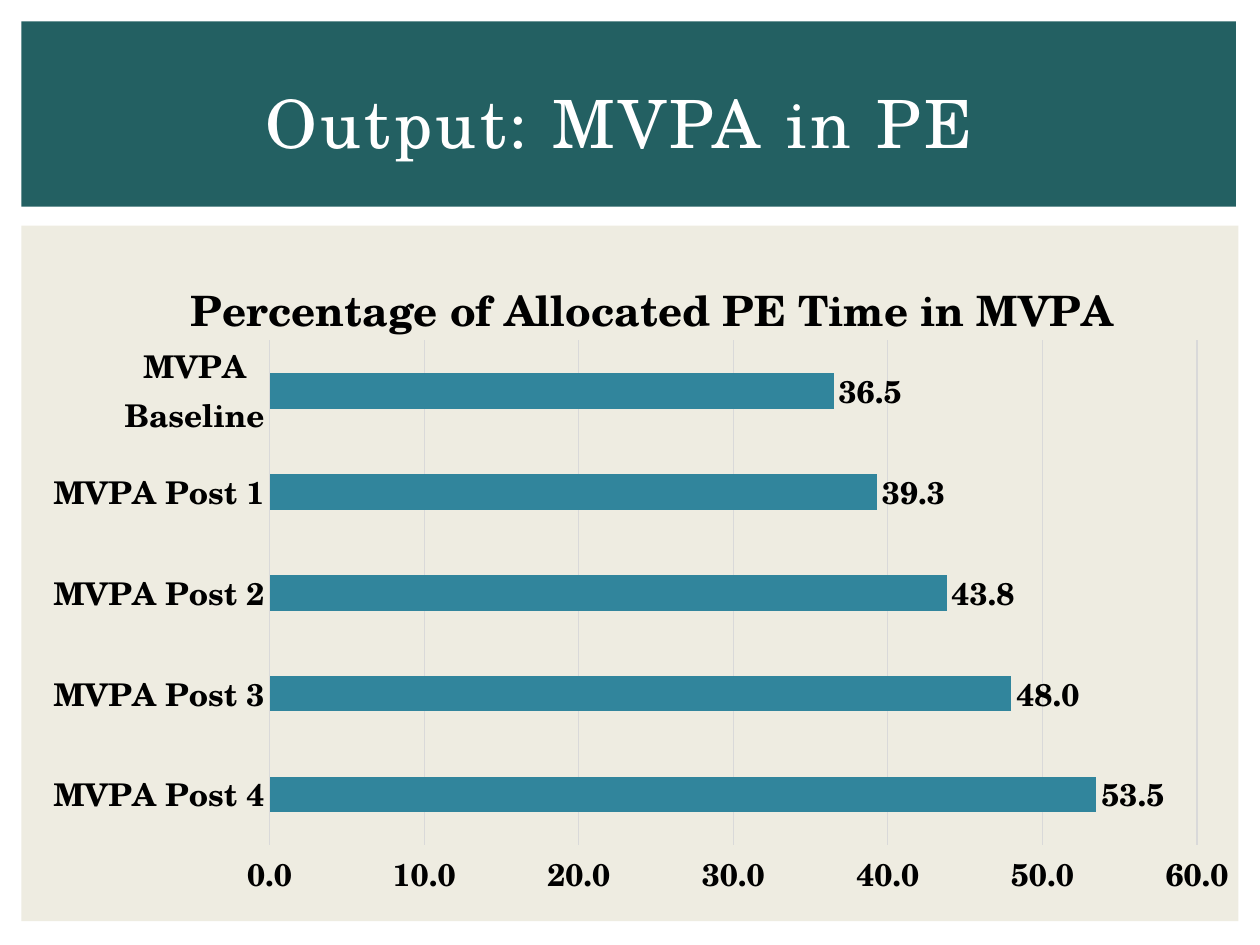
import dataclasses

import lxml.etree
import pptx
import pptx.chart.data
import pptx.dml.color
import pptx.enum.chart
import pptx.enum.shapes
import pptx.enum.text
import pptx.oxml
import pptx.oxml.ns
import pptx.util


@dataclasses.dataclass(frozen=True)
class Theme:
    """Colours, font and type sizes of the slide."""
    font: str = "TeX Gyre Schola"
    banner: str = "236062"
    panel: str = "EEECE1"
    bar: str = "31859C"
    rule: str = "D9D9D9"
    dark: str = "000000"
    light: str = "FFFFFF"
    title: int = 38
    chart_title: int = 24
    label: int = 18
    base: int = 10
    spacing: int = 200
    line: float = 0.75


THEME = Theme()
MVPA = {
    "MVPA Post 4": 53.5,
    "MVPA Post 3": 48.0,
    "MVPA Post 2": 43.8,
    "MVPA Post 1": 39.3,
    "MVPA Baseline": 36.5,
}


def rgb(value):
    """Turn a hex string into a colour."""
    return pptx.dml.color.RGBColor.from_string(value)


def box(prs, x, y, w, h):
    """Turn percentages of the slide into left, top, width and height."""
    sizes = (prs.slide_width, prs.slide_height) * 2
    return [pptx.util.Emu(round(size * share / 100)) for size, share in zip(sizes, (x, y, w, h))]


def style_font(font, size, color=THEME.dark, bold=True):
    """Set face, size, colour and weight of a font."""
    font.name = THEME.font
    font.size = pptx.util.Pt(size)
    font.bold = bold
    font.color.rgb = rgb(color)


def style_line(fmt):
    """Draw a thin rule."""
    fmt.line.color.rgb = rgb(THEME.rule)
    fmt.line.width = pptx.util.Pt(THEME.line)


def add_panel(s, frame, color):
    """Add a plain filled rectangle."""
    sp = s.shapes.add_shape(pptx.enum.shapes.MSO_SHAPE.RECTANGLE, *frame)
    sp.shadow.inherit = False
    sp.fill.solid()
    sp.fill.fore_color.rgb = rgb(color)
    sp.line.fill.background()


def set_title(s, frame, text):
    """Fill the title placeholder and bring it in front of the panels."""
    sp = s.shapes.title
    sp.left, sp.top, sp.width, sp.height = frame
    tf = sp.text_frame
    tf.auto_size = pptx.enum.text.MSO_AUTO_SIZE.NONE
    tf.vertical_anchor = pptx.enum.text.MSO_ANCHOR.MIDDLE
    p = tf.paragraphs[0]
    p.alignment = pptx.enum.text.PP_ALIGN.CENTER
    r = p.add_run()
    r.text = text
    style_font(p.font, THEME.title, THEME.light, False)
    r.font.size = p.font.size
    r._r.get_or_add_rPr().set("spc", str(THEME.spacing))
    sp.element.getparent().append(sp.element)


def set_layout(parent, before, **values):
    """Place a chart part by hand, in shares of the chart."""
    for old in parent.findall(pptx.oxml.ns.qn("c:layout")):
        parent.remove(old)
    parts = "".join(f'<c:{tag} val="{val}"/>' for tag, val in values.items())
    layout = pptx.oxml.parse_xml(
        f'<c:layout {pptx.oxml.ns.nsdecls("c")}><c:manualLayout>{parts}</c:manualLayout></c:layout>')
    follower = parent.find(pptx.oxml.ns.qn(before))
    follower.addprevious(layout)


def style_axis(axis):
    """Remove the ticks of an axis and set its labels."""
    axis.major_tick_mark = axis.minor_tick_mark = pptx.enum.chart.XL_TICK_MARK.NONE
    style_font(axis.tick_labels.font, THEME.label)


def add_bars(s, frame, title, values):
    """Add the titled bar chart with value labels."""
    data = pptx.chart.data.CategoryChartData(number_format="0.0")
    data.categories = values.keys()
    data.add_series("Series 1", values.values())
    chart = s.shapes.add_chart(pptx.enum.chart.XL_CHART_TYPE.BAR_CLUSTERED, *frame, data).chart
    style_font(chart.font, THEME.base, bold=False)
    chart.has_legend = False

    p = chart.chart_title.text_frame.paragraphs[0]
    r = p.add_run()
    r.text = title
    style_font(r.font, THEME.chart_title)
    chart.chart_title.include_in_layout = False
    set_layout(chart.chart_title._element, "c:overlay", xMode="edge", yMode="edge", x=0.11, y=0.05)

    cat, val = chart.category_axis, chart.value_axis
    for axis in (cat, val):
        style_axis(axis)
    style_line(cat.format)
    val.format.line.fill.background()
    val.has_major_gridlines = True
    style_line(val.major_gridlines.format)
    val.minimum_scale, val.maximum_scale, val.major_unit = 0, 60, 10
    val.tick_labels.number_format = "0.0"
    val.tick_labels.number_format_is_linked = False

    plot = chart.plots[0]
    plot.gap_width = 182
    plot.vary_by_categories = False
    series = plot.series[0]
    series.format.fill.solid()
    series.format.fill.fore_color.rgb = rgb(THEME.bar)
    labels = series.data_labels
    labels.show_value = True
    labels.position = pptx.enum.chart.XL_LABEL_POSITION.OUTSIDE_END
    labels.number_format = "0.0"
    labels.number_format_is_linked = False
    style_font(labels.font, THEME.label)
    area = plot._element.getparent()
    set_layout(area, "c:barChart", layoutTarget="inner", xMode="edge", yMode="edge",
               x=0.183, y=0.165, w=0.783, h=0.759)


def main():
    """Build the slide and save it."""
    prs = pptx.Presentation()
    prs.slide_width, prs.slide_height = pptx.util.Inches(10), pptx.util.Inches(7.5)
    s = prs.slides.add_slide(prs.slide_layouts[5])
    add_panel(s, box(prs, 1.7, 23.87, 96.6, 73.6), THEME.panel)
    add_panel(s, box(prs, 1.7, 2.27, 96.4, 19.6), THEME.banner)
    set_title(s, box(prs, 4.2, 5.2, 91.7, 15.33), "Output: MVPA in PE ")
    add_bars(s, box(prs, 4.2, 24.4, 94, 70.67), "Percentage of Allocated PE Time in MVPA", MVPA)
    prs.save("out.pptx")


if __name__ == "__main__":
    main()
